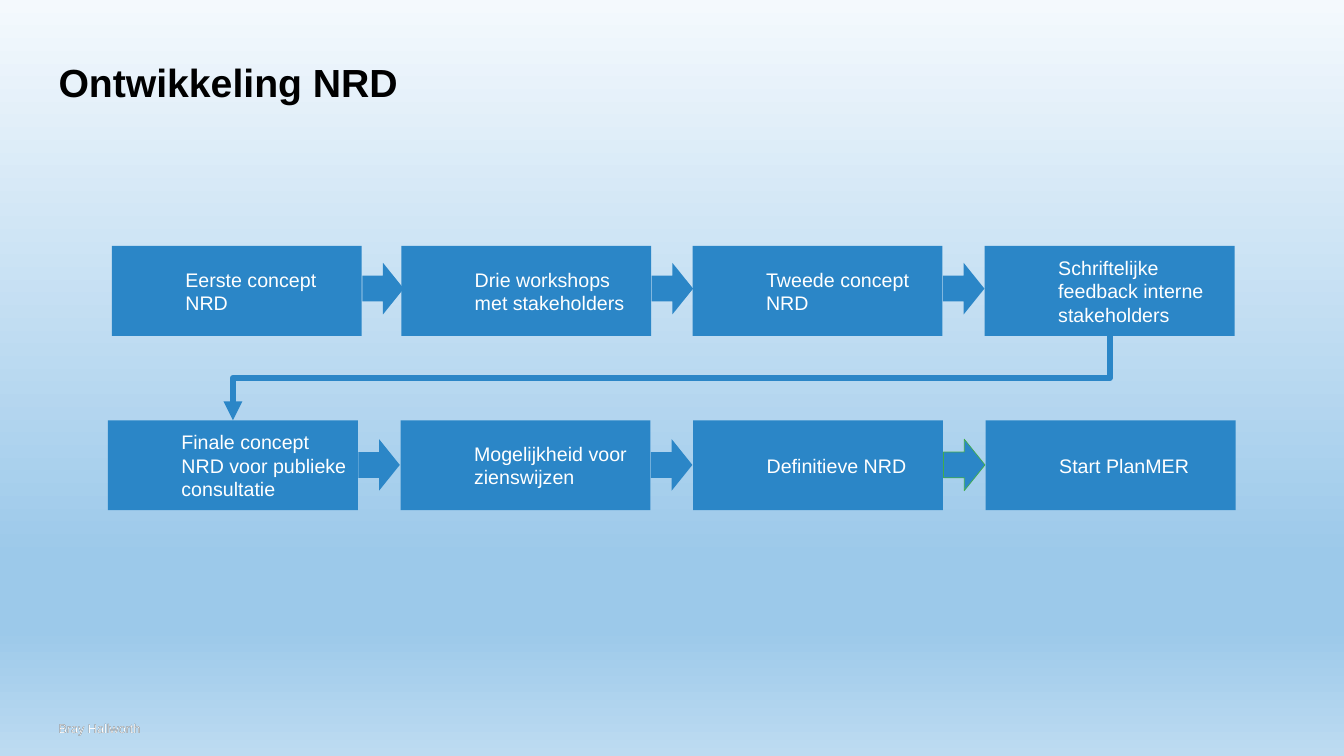
from dataclasses import dataclass

from pptx import Presentation
from pptx.dml.color import RGBColor
from pptx.enum.shapes import MSO_CONNECTOR as Link, MSO_SHAPE as Preset
from pptx.enum.text import MSO_ANCHOR as Anchor, MSO_AUTO_SIZE as AutoSize, PP_ALIGN as Align
from pptx.oxml import parse_xml
from pptx.oxml.ns import nsdecls, qn
from pptx.shapes.autoshape import Shape
from pptx.slide import Slide
from pptx.util import Pt

COLORS = {"blue": "2B86C7", "green": "41AC4C", "black": "000000", "white": "FFFFFF"}
SKY = ((0, "F4F9FD"), (74, "9CC9EA"), (83, "9CC9EA"), (100, "BDDBF1"))

BOX_W, BOX_H = 178.5, 64.2
ARROW_W, ARROW_H = 29.6, 36.8
ARROW_OFFSET = 178.9


@dataclass(frozen=True)
class StepRow:
    top: float
    arrow_top: float
    lefts: tuple[float, ...]
    steps: tuple[str, ...]
    outlined_arrow: int | None = None


ROWS = (
    StepRow(175.7, 187.8, (79.9, 286.6, 494.7, 703.4),
            ("Eerste concept NRD", "Drie workshops met stakeholders",
             "Tweede concept NRD", "Schriftelijke feedback interne stakeholders")),
    StepRow(300.2, 313.7, tuple(77.1 + 209 * i for i in range(4)),
            ("Finale concept NRD voor publieke consultatie",
             "Mogelijkheid voor zienswijzen", "Definitieve NRD", "Start PlanMER"),
            outlined_arrow=2),
)


def rgb(name: str) -> RGBColor:
    return RGBColor.from_string(COLORS[name])


def write(shape: Shape, text: str, *, size: float, color: str, bold: bool = False,
          inset: float = 0, indent: float = 0, anchor: Anchor = Anchor.TOP) -> None:
    frame = shape.text_frame
    frame.word_wrap = True
    frame.vertical_anchor = anchor
    frame.margin_left = frame.margin_top = Pt(inset)
    frame.margin_right = frame.margin_bottom = Pt(inset)
    paragraph = frame.paragraphs[0]
    paragraph.alignment = Align.LEFT
    if indent:
        properties = paragraph._p.get_or_add_pPr()
        properties.set("marL", str(Pt(indent)))
        properties.set("indent", "0")
    run = paragraph.add_run()
    run.text = text
    run.font.name = "Arial"
    run.font.size = Pt(size)
    run.font.bold = bold
    run.font.color.rgb = rgb(color)


def add_block(slide: Slide, preset: Preset, left: float, top: float,
              width: float, height: float, outline: str | None = None) -> Shape:
    block = slide.shapes.add_shape(preset, Pt(left), Pt(top), Pt(width), Pt(height))
    block.shadow.inherit = False
    block.fill.solid()
    block.fill.fore_color.rgb = rgb("blue")
    if outline:
        block.line.color.rgb = rgb(outline)
        block.line.width = Pt(0.5)
    else:
        block.line.fill.background()
    return block


def add_row(slide: Slide, row: StepRow) -> None:
    for left, step in zip(row.lefts, row.steps):
        box = add_block(slide, Preset.RECTANGLE, left, row.top, BOX_W, BOX_H)
        write(box, step, size=14, color="white", inset=7.2, indent=45.4, anchor=Anchor.MIDDLE)
    for i, left in enumerate(row.lefts[:-1]):
        outline = "green" if i == row.outlined_arrow else None
        add_block(slide, Preset.RIGHT_ARROW, left + ARROW_OFFSET, row.arrow_top,
                  ARROW_W, ARROW_H, outline)


def add_return_path(slide: Slide, upper: StepRow, lower: StepRow) -> None:
    """Elbow from the last upper step down to the first lower step."""
    start_x, start_y = upper.lefts[-1] + BOX_W / 2, upper.top + BOX_H
    end_x, end_y = lower.lefts[0] + BOX_W / 2, lower.top
    mid_x, mid_y = (start_x + end_x) / 2, (start_y + end_y) / 2
    # Unrotated extents: a quarter turn makes the path leave downwards
    half_w, half_h = (end_y - start_y) / 2, (start_x - end_x) / 2
    path = slide.shapes.add_connector(Link.ELBOW, Pt(mid_x - half_w), Pt(mid_y - half_h),
                                      Pt(mid_x + half_w), Pt(mid_y + half_h))
    path.line.color.rgb = rgb("blue")
    path.line.width = Pt(4.5)
    properties = path._element.spPr
    properties.find(qn("a:xfrm")).set("rot", "5400000")
    path.line._get_or_add_ln().append(
        parse_xml(f'<a:tailEnd {nsdecls("a")} type="triangle"/>'))
    properties.append(parse_xml(f'<a:effectLst {nsdecls("a")}/>'))


def paint_background(slide: Slide) -> None:
    fill = slide.background.fill
    fill.gradient()
    fill.gradient_angle = 270
    stops = next(slide.element.iter(qn("a:gsLst")))
    for stop in list(stops):
        stops.remove(stop)
    for percent, color in SKY:
        stops.append(parse_xml(f'<a:gs {nsdecls("a")} pos="{percent * 1000}">'
                               f'<a:srgbClr val="{color}"/></a:gs>'))


def main() -> None:
    deck = Presentation()
    deck.slide_width, deck.slide_height = Pt(960), Pt(540)
    slide = deck.slides.add_slide(deck.slide_layouts[6])
    paint_background(slide)

    # Footer: white lettering over black
    for color in ("black", "white"):
        footer = slide.shapes.add_textbox(Pt(41.8), Pt(514.8), Pt(173.5), Pt(11.5))
        write(footer, "Bray Hallworth", size=9, color=color)
        footer.text_frame.auto_size = AutoSize.SHAPE_TO_FIT_TEXT

    # Title
    title = slide.shapes.add_textbox(Pt(41.8), Pt(41.8), Pt(877), Pt(36))
    write(title, "Ontwikkeling NRD", size=28, color="black", bold=True)

    # Process steps
    for row in ROWS:
        add_row(slide, row)
    add_return_path(slide, *ROWS)

    deck.save("out.pptx")


if __name__ == "__main__":
    main()
